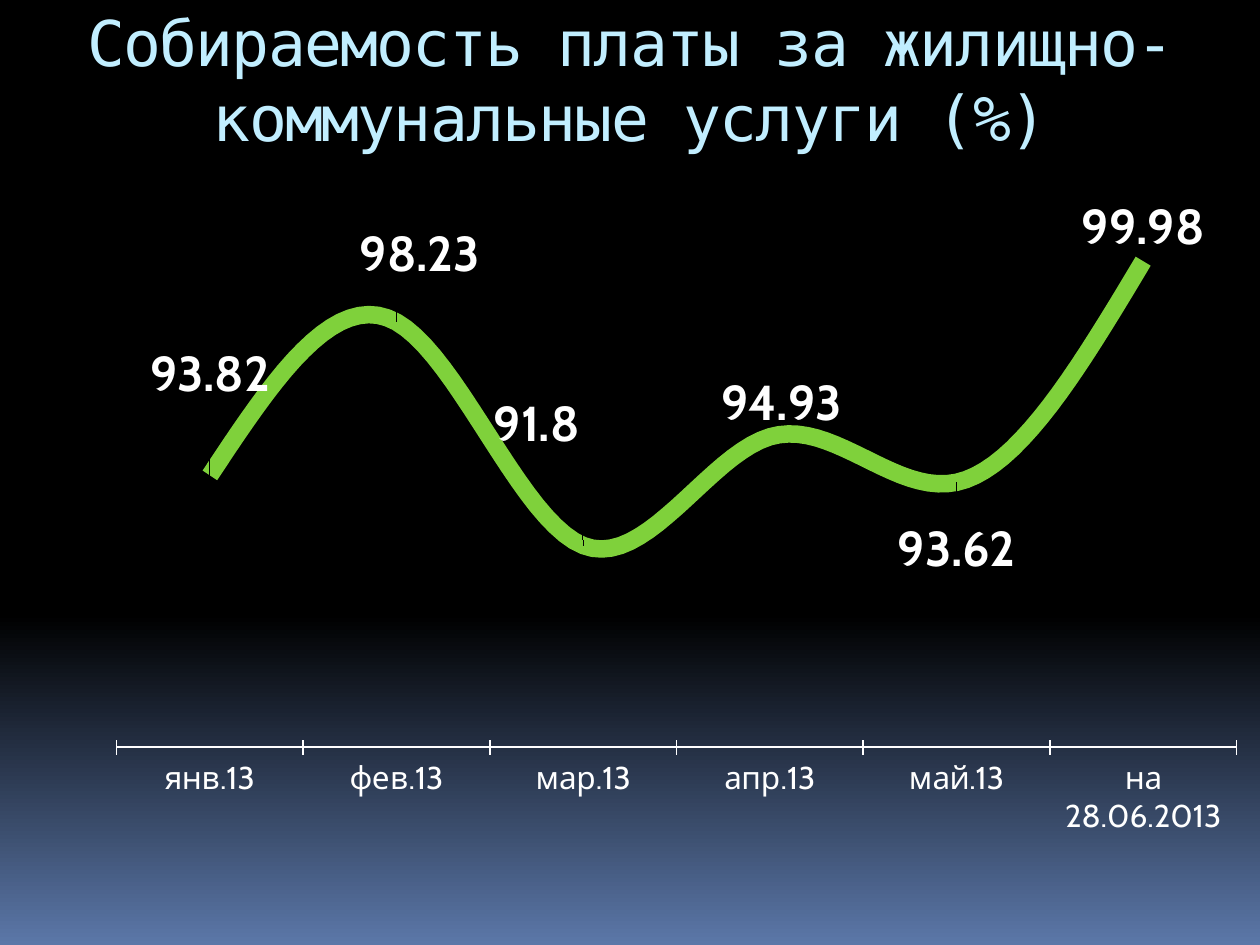
from copy import deepcopy
from dataclasses import dataclass

from lxml.etree import SubElement
from pptx import Presentation
from pptx.chart.chart import Chart
from pptx.chart.data import CategoryChartData
from pptx.chart.point import Point
from pptx.dml.color import RGBColor
from pptx.enum.chart import XL_CHART_TYPE, XL_LABEL_POSITION, XL_TICK_LABEL_POSITION, XL_TICK_MARK
from pptx.enum.text import MSO_ANCHOR, PP_ALIGN
from pptx.oxml.ns import qn
from pptx.util import Inches, Pt


@dataclass
class Month:
    name: str
    rate: float
    dx: float = 0  # label shift, as a share of the chart size
    dy: float = 0


MONTHS = [
    Month("янв.13", 93.82, 0, -0.1),
    Month("фев.13", 98.23, 0.02, -0.05),
    Month("мар.13", 91.8, -0.04, -0.13),
    Month("апр.13", 94.93, 0.01, 0),
    Month("май.13", 93.62, 0, 0.15),
    Month("на 28.06.2013", 99.98),
]
BACKGROUND = [(0, "000000"), (0.65, "000000"), (1, "5B77A8")]
WHITE = "FFFFFF"


def rgb(color: str) -> RGBColor:
    return RGBColor.from_string(color)


def set_font(font, name: str, size: float, color: str, bold: bool = False) -> None:
    font.name, font.size, font.bold = name, Pt(size), bold
    font.color.rgb = rgb(color)


def add_layout(parent, index: int, **values) -> None:
    """Insert a manual layout as the child of parent at the given index."""
    layout = SubElement(parent, qn("c:layout"))
    manual = SubElement(layout, qn("c:manualLayout"))
    for tag, value in values.items():
        SubElement(manual, qn(f"c:{tag}")).set("val", str(value))
    parent.insert(index, layout)


def label_point(point: Point, month: Month) -> None:
    label = point.data_label
    set_font(label.font, "Cabin", 28, WHITE, bold=True)
    label.position = XL_LABEL_POSITION.ABOVE
    if month.dx or month.dy:
        d_lbl = point._ser.find(f".//{qn('c:dLbl')}[last()]")
        add_layout(d_lbl, 1, x=month.dx, y=month.dy)


def format_axes(chart: Chart) -> None:
    axis = chart.value_axis
    axis.minimum_scale, axis.maximum_scale = 86, 102
    axis.has_major_gridlines = False
    axis.visible = False
    axis = chart.category_axis
    axis.major_tick_mark = XL_TICK_MARK.CROSS
    axis.tick_label_position = XL_TICK_LABEL_POSITION.LOW
    axis.format.line.color.rgb = rgb(WHITE)
    axis.format.line.width = Pt(1)


prs = Presentation()
prs.slide_width, prs.slide_height = Inches(10), Inches(7.5)
s = prs.slides.add_slide(prs.slide_layouts[5])

# Background gradient, from top to bottom
fill = s.background.fill
fill.gradient()
fill.gradient_angle = 270
gs_list = s._element.find(f".//{qn('a:gsLst')}")
gs_list.append(deepcopy(gs_list[0]))
for stop, (position, color) in zip(fill.gradient_stops, BACKGROUND):
    stop.position = position
    stop.color.rgb = rgb(color)

# Title
title = s.shapes.title
title.left, title.top, title.width, title.height = (Inches(v) for v in (0.5, 0, 9, 1.25))
tf = title.text_frame
tf.word_wrap = True
tf.vertical_anchor = MSO_ANCHOR.MIDDLE
p = tf.paragraphs[0]
p.alignment = PP_ALIGN.CENTER
set_font(p.font, "DejaVu Sans Mono", 36, "C1EEFF")
r = p.add_run()
r.text = "Собираемость платы за жилищно-коммунальные услуги (%)"
r.font._element.set("spc", "-100")

# Line chart
data = CategoryChartData()
data.categories = [m.name for m in MONTHS]
data.add_series("Series 1", [m.rate for m in MONTHS])
chart = s.shapes.add_chart(XL_CHART_TYPE.LINE, Inches(0.74), Inches(1.41),
                           Inches(9.26), Inches(5.32), data).chart
chart.has_legend = chart.has_title = False
set_font(chart.font, "Cabin", 18, WHITE)
format_axes(chart)

plot = chart.plots[0]
plot.vary_by_categories = False
plot_area = chart._chartSpace.find(f".//{qn('c:plotArea')}")
for old in plot_area.findall(qn("c:layout")):
    plot_area.remove(old)
add_layout(plot_area, 0, layoutTarget="inner", xMode="edge", yMode="edge",
           x=0.02, y=0.02, w=0.96, h=0.83)

series = plot.series[0]
series.smooth = True
series.format.line.color.rgb = rgb("7FD13B")
series.format.line.width = Pt(10)

# Value labels
labels = series.data_labels
labels.show_value = True
labels.position = XL_LABEL_POSITION.ABOVE
set_font(labels.font, "Cabin", 28, WHITE, bold=True)
for i, month in enumerate(MONTHS):
    label_point(series.points[i], month)

prs.save("out.pptx")
